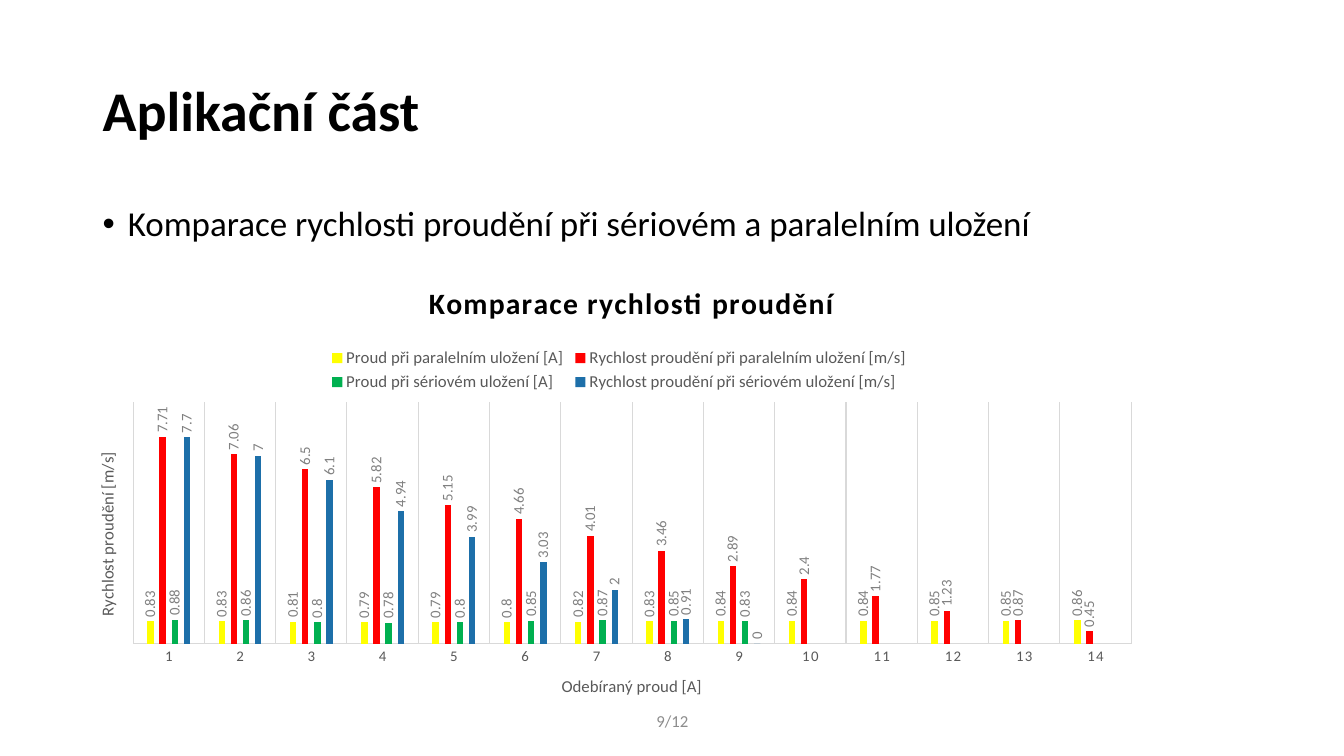
from lxml.etree import SubElement
from pptx import Presentation
from pptx.chart.data import CategoryChartData
from pptx.dml.color import RGBColor
from pptx.enum.chart import (XL_CHART_TYPE as ChartType, XL_LABEL_POSITION as LabelPos,
                             XL_LEGEND_POSITION as LegendPos, XL_TICK_MARK as TickMark)
from pptx.enum.text import MSO_ANCHOR as Anchor, PP_ALIGN as Align
from pptx.oxml import parse_xml
from pptx.oxml.ns import nsdecls, qn
from pptx.util import Inches, Pt

FONT = "Calibri"
GREY, GRID = "595959", "D9D9D9"
CHART_WIDTH, CHART_HEIGHT = 10.45, 4.3
CURRENTS = range(1, 15)
SERIES = [
    ("Proud při paralelním uložení [A]", "FFFF00",
     [0.83, 0.83, 0.81, 0.79, 0.79, 0.8, 0.82, 0.83, 0.84, 0.84, 0.84, 0.85, 0.85, 0.86]),
    ("Rychlost proudění při paralelním uložení [m/s]", "FF0000",
     [7.71, 7.06, 6.5, 5.82, 5.15, 4.66, 4.01, 3.46, 2.89, 2.4, 1.77, 1.23, 0.87, 0.45]),
    ("Proud při sériovém uložení [A]", "00B050",
     [0.88, 0.86, 0.8, 0.78, 0.8, 0.85, 0.87, 0.85, 0.83]),
    ("Rychlost proudění při sériovém uložení [m/s]", "1D6FA9",
     [7.7, 7, 6.1, 4.94, 3.99, 3.03, 2, 0.91, 0]),
]


def rgb(value):
    return RGBColor.from_string(value)


def style_font(font, size, color, bold=False):
    font.name, font.size, font.bold = FONT, Pt(size), bold
    font.color.rgb = rgb(color)


def add_text(slide, box, text, size, color="000000", bold=False,
             anchor=Anchor.TOP, align=Align.LEFT, spacing=1.0, bullet=False):
    frame = slide.shapes.add_textbox(*map(Inches, box)).text_frame
    frame.word_wrap, frame.vertical_anchor = True, anchor
    paragraph = frame.paragraphs[0]
    paragraph.alignment, paragraph.line_spacing = align, spacing
    if bullet:
        props = paragraph._p.get_or_add_pPr()
        props.set("marL", str(Inches(0.25)))
        props.set("indent", str(-Inches(0.25)))
        SubElement(props, qn("a:buFont")).set("typeface", "Arial")
        SubElement(props, qn("a:buChar")).set("char", "•")
    run = paragraph.add_run()
    run.text = text
    style_font(run.font, size, color, bold)


def place(parent, index, x, y, w=None, h=None, inner=False):
    """Place a chart part, in inches from the chart's top left corner."""
    for old in parent.findall(qn("c:layout")):
        parent.remove(old)
    layout = parse_xml(f"<c:layout {nsdecls('c')}><c:manualLayout/></c:layout>")
    values = [("xMode", "edge"), ("yMode", "edge"),
              ("x", x / CHART_WIDTH), ("y", y / CHART_HEIGHT)]
    if inner:
        values.insert(0, ("layoutTarget", "inner"))
    if w is not None:
        values += [("w", w / CHART_WIDTH), ("h", h / CHART_HEIGHT)]
    for tag, value in values:
        SubElement(layout[0], qn(f"c:{tag}")).set("val", str(value))
    parent.insert(index, layout)


def set_title(owner_title, text, size, color, x, y, bold=False, tracking=0, rotation=None):
    frame = owner_title.text_frame
    run = frame.paragraphs[0].add_run()
    run.text = text
    style_font(run.font, size, color, bold)
    run._r.get_or_add_rPr().set("spc", str(tracking))
    if rotation is not None:
        rotate(frame._txBody, rotation)
    place(owner_title._element, 1, x, y)


def rotate(text_body, degrees):
    body = text_body.find(qn("a:bodyPr"))
    body.set("rot", str(degrees * 60000))
    body.set("vert", "horz")


def style_line(line):
    line.color.rgb, line.width = rgb(GRID), Pt(0.75)


def style_axes(chart):
    current = chart.category_axis
    current.major_tick_mark = current.minor_tick_mark = TickMark.NONE
    current.has_major_gridlines = True
    style_line(current.major_gridlines.format.line)
    style_line(current.format.line)
    style_font(current.tick_labels.font, 10.6, GREY)
    current._element.find(".//" + qn("a:defRPr")).set("spc", "100")
    set_title(current.axis_title, "Odebíraný proud [A]", 12, GREY, 4.62, 4.03)

    speed = chart.value_axis
    speed.minimum_scale, speed.maximum_scale = 0, 9
    speed.has_major_gridlines = False
    set_title(speed.axis_title, "Rychlost proudění [m/s]", 12, GREY, 0, 1.82, rotation=-90)
    speed.visible = False


def style_series(series, color):
    series.format.fill.solid()
    series.format.fill.fore_color.rgb = rgb(color)
    series.invert_if_negative = False
    labels = series.data_labels
    labels.show_value, labels.position = True, LabelPos.OUTSIDE_END
    style_font(labels.font, 10.6, "808080")
    rotate(labels._element.find(qn("c:txPr")), -90)


def add_speed_chart(slide, left, top):
    data = CategoryChartData()
    data.categories = [str(current) for current in CURRENTS]
    for name, _, values in SERIES:
        data.add_series(name, values + [None] * (len(CURRENTS) - len(values)))
    box = map(Inches, (left, top, CHART_WIDTH, CHART_HEIGHT))
    chart = slide.shapes.add_chart(ChartType.COLUMN_CLUSTERED, *box, data).chart
    style_font(chart.font, 10, "000000")
    chart.has_title = True
    set_title(chart.chart_title, "Komparace rychlosti proudění", 21.2, "000000",
              3.28, 0.09, bold=True, tracking=100)

    # Columns
    columns = chart.plots[0]
    columns.gap_width, columns.overlap = 444, -90
    columns.vary_by_categories = False
    for series, (_, color, _) in zip(columns.series, SERIES):
        style_series(series, color)
    style_axes(chart)
    place(chart._chartSpace.chart.plotArea, 0, 0.4, 1.34, 9.9, 2.41, inner=True)

    # Legend above the columns
    chart.has_legend = True
    legend = chart.legend
    legend.position, legend.include_in_layout = LegendPos.TOP, False
    style_font(legend.font, 12, GREY)
    place(legend._element, 1, 2.31, 0.76, 5.82, 0.52)


def main():
    deck = Presentation()
    deck.slide_width, deck.slide_height = Inches(13.33), Inches(7.5)
    slide = deck.slides.add_slide(deck.slide_layouts[6])

    # Heading and topic
    add_text(slide, (0.92, 0.4, 11.5, 1.45), "Aplikační část", 40,
             bold=True, anchor=Anchor.MIDDLE, spacing=0.9)
    add_text(slide, (0.92, 2, 11.5, 0.6),
             "Komparace rychlosti proudění při sériovém a paralelním uložení",
             25, spacing=0.9, bullet=True)

    # Chart and page number
    add_speed_chart(slide, 0.92, 2.66)
    add_text(slide, (4.42, 6.95, 4.5, 0.4), "9/12", 12, color="8C8C8C",
             anchor=Anchor.MIDDLE, align=Align.CENTER)
    deck.save("out.pptx")


if __name__ == "__main__":
    main()
